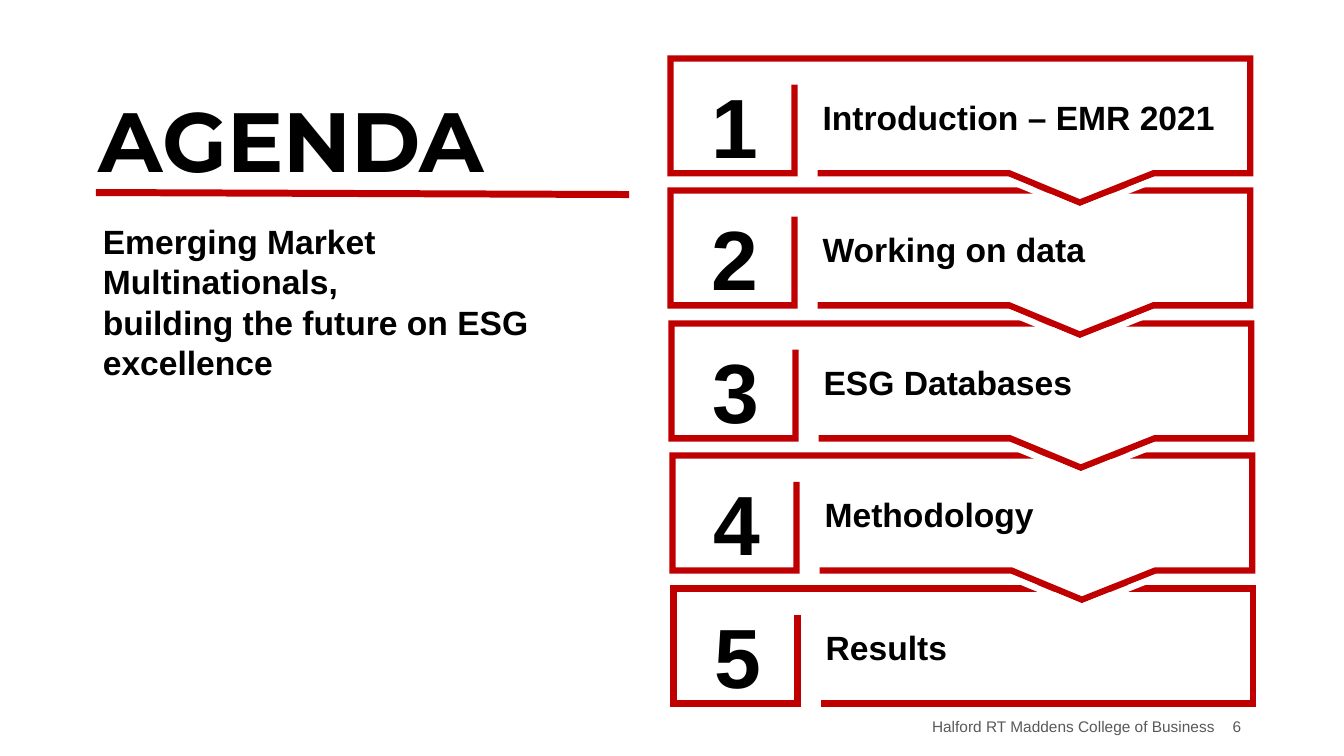
from lxml.etree import SubElement
from pptx import Presentation
from pptx.dml.color import RGBColor
from pptx.enum.shapes import MSO_CONNECTOR
from pptx.enum.text import MSO_ANCHOR, MSO_AUTO_SIZE, PP_ALIGN
from pptx.oxml.ns import qn
from pptx.util import Pt

PX = 9144  # EMU in one px, 100 px to the inch
COLORS = {"red": "C00000", "white": "FFFFFF", "black": "000000", "gray": "595959"}
STEPS = ["Introduction – EMR 2021", "Working on data", "ESG Databases", "Methodology", "Results"]
FIRST_LEFT, FIRST_TOP = 665, 58


def color(name):
    return RGBColor.from_string(COLORS[name])


def place(shape, left, top, width, height):
    shape.left, shape.top = left * PX, top * PX
    shape.width, shape.height = width * PX, height * PX


def write(shape, *lines, size=24, font="Arial", ink="black", bold=True,
          align=PP_ALIGN.LEFT, anchor=MSO_ANCHOR.TOP, spacing=1.0):
    """Put one paragraph per line into the shape, without bullets."""
    frame = shape.text_frame
    frame.word_wrap = True
    frame.auto_size = MSO_AUTO_SIZE.NONE
    frame.vertical_anchor = anchor
    for index, line in enumerate(lines):
        paragraph = frame.add_paragraph() if index else frame.paragraphs[0]
        paragraph.alignment = align
        paragraph.line_spacing = spacing
        paragraph.space_before = Pt(0)
        properties = paragraph._p.get_or_add_pPr()
        properties.set("marL", "0")
        properties.set("indent", "0")
        SubElement(properties, qn("a:buNone"))
        run = paragraph.add_run()
        run.text = line
        run.font.size, run.font.name, run.font.bold = Pt(size), font, bold
        run.font.color.rgb = color(ink)


def add_text(slide, box, *lines, **text_format):
    left, top, width, height = (length * PX for length in box)
    write(slide.shapes.add_textbox(left, top, width, height), *lines, **text_format)


def add_outline(slide, left, top, points, line, fill=None):
    """Draw an open outline through points given relative to left and top."""
    start, *others = [(left + x, top + y) for x, y in points]
    builder = slide.shapes.build_freeform(*start, scale=PX)
    builder.add_line_segments(others, close=False)
    shape = builder.convert_to_shape()
    shape.shadow.inherit = False
    if fill:
        shape.fill.solid()
        shape.fill.fore_color.rgb = color(fill)
    else:
        shape.fill.background()
    shape.line.color.rgb = color(line)
    shape.line.width = Pt(4.5)
    SubElement(shape.line._get_or_add_ln(), qn("a:miter"), lim="800000")


def add_step(slide, left, top, number, label, has_arrow):
    width, height, divider, divider_top = 575, 114, 123, 26
    notch = [(336, height), (406, height + 29), (479, height)]
    add_outline(
        slide, left, top,
        [(146, height), *(notch if has_arrow else []),
         (width, height), (width, 0), (0, 0), (0, height),
         (divider, height), (divider, divider_top)],
        line="red", fill="white")
    add_text(slide, (left + 141, top - 6, 411, 108), label,
             anchor=MSO_ANCHOR.MIDDLE, spacing=1.5)
    add_text(slide, (left, top - 20, 127, 122), str(number), size=60,
             align=PP_ALIGN.CENTER, anchor=MSO_ANCHOR.MIDDLE, spacing=1.5)
    if has_arrow:
        add_outline(slide, left, top, [(x, y + 7) for x, y in notch], line="white")


def add_steps(slide, left, top):
    """Stack the steps from the last up, so each arrow overlaps the next step."""
    for index, label in reversed(list(enumerate(STEPS))):
        add_step(slide, left + index * 3 // 4, top + index * 263 // 2,
                 index + 1, label, has_arrow=index < len(STEPS) - 1)


def add_heading(slide, left, top):
    title, body = slide.placeholders
    place(title, left, top, 1201, 101)
    write(title, "AGENDA", size=60, font="Montserrat",
          anchor=MSO_ANCHOR.BOTTOM, spacing=0.9)
    place(body, left + 4, top + 121, 487, 172)
    write(body, "Emerging Market Multinationals,", "building the future on ESG excellence")
    rule = slide.shapes.add_connector(
        MSO_CONNECTOR.STRAIGHT, (left + 7) * PX, (top + 98) * PX,
        (left + 536) * PX, (top + 100) * PX)
    rule.line.color.rgb = color("red")
    rule.line.width = Pt(5)
    SubElement(rule._element.spPr, qn("a:effectLst"))


def add_footer(slide, right, top):
    style = {"size": 11, "ink": "gray", "bold": False, "align": PP_ALIGN.RIGHT}
    add_text(slide, (right - 426, top, 400, 34),
             "Halford RT Maddens College of Business", **style)
    add_text(slide, (right - 40, top, 40, 34), "6", **style)


def main():
    presentation = Presentation()
    presentation.slide_width, presentation.slide_height = 1333 * PX, 750 * PX
    slide = presentation.slides.add_slide(presentation.slide_layouts[1])
    add_heading(slide, 88, 93)
    add_steps(slide, FIRST_LEFT, FIRST_TOP)
    add_footer(slide, 1241, 707)
    presentation.save("out.pptx")


if __name__ == "__main__":
    main()
